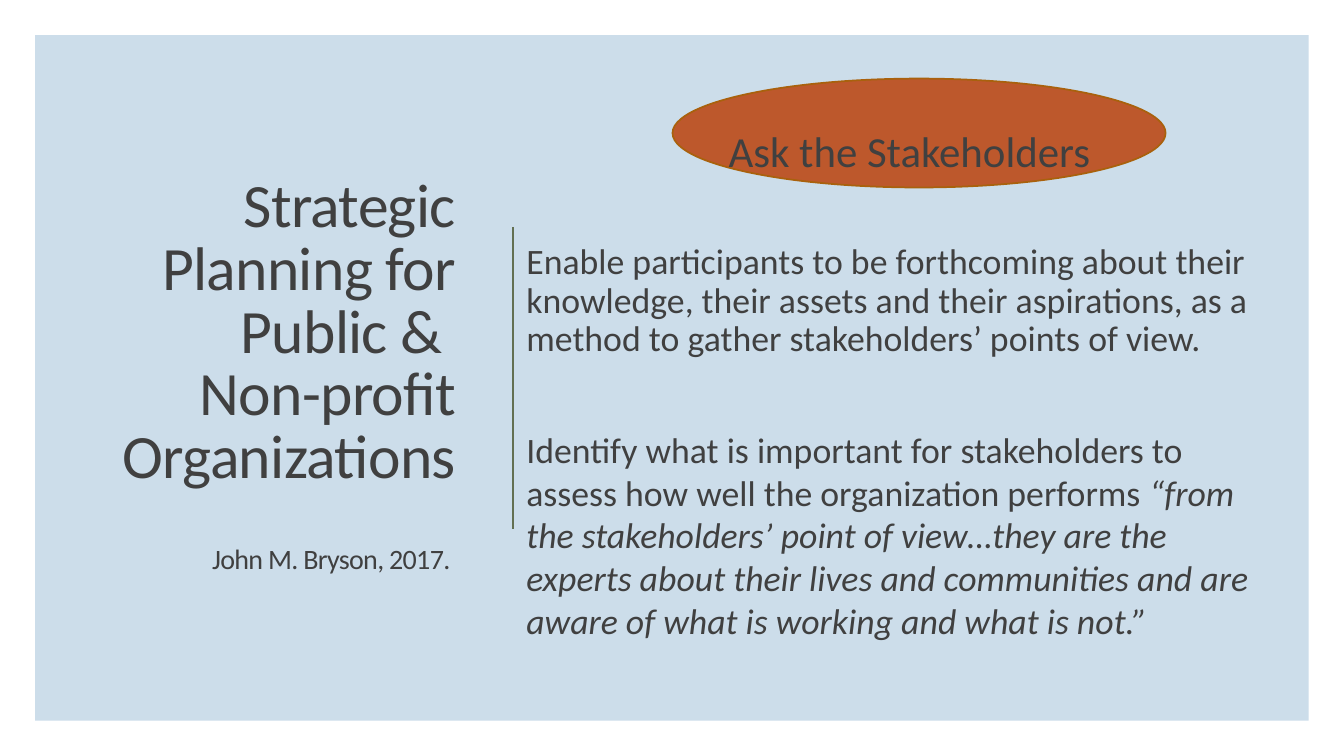
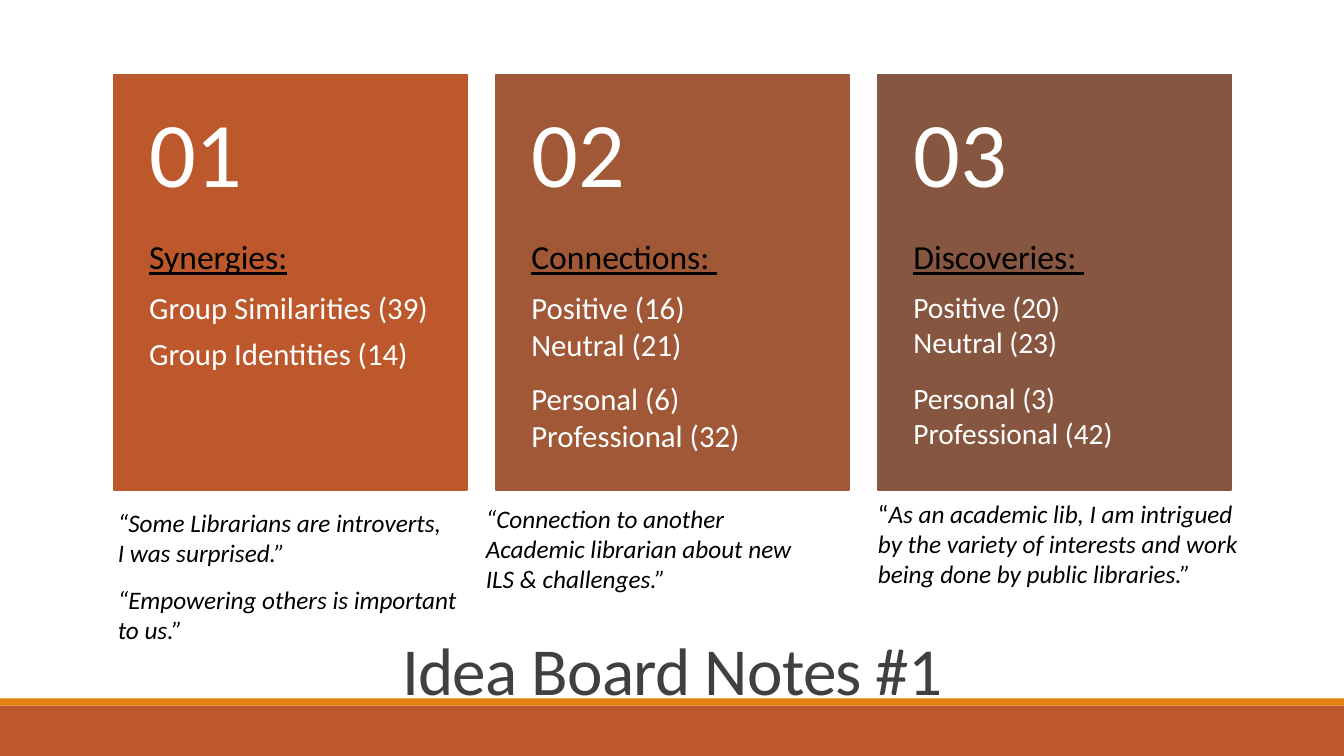
from lxml import etree
from pptx import Presentation
from pptx import util as u
from pptx.dml.color import RGBColor
from pptx.enum import shapes, text
from pptx.oxml.ns import qn

Inches, Pt = u.Inches, u.Pt
FONT = "Calibri"
COLORS = {
    "rust": "BD582C", "sienna": "A05837", "brown": "865640",
    "orange": "E48312", "bronze": "A9610D", "olive": "637052",
    "sky": "CCDDEA", "ink": "404040", "black": "000000", "white": "FFFFFF",
}
TITLE_STYLE = dict(color="ink", ls=0.85, spacing=-0.5)

# Content: a text is a string, or a list of (words, italic) pieces
BOOK = "Strategic\vPlanning for\vPublic & \vNon-profit\vOrganizations"
AUTHOR = "John M. Bryson, 2017. "
HEADING = "Ask the Stakeholders"
ENABLE = ("Enable participants to be forthcoming about their knowledge, their assets "
          "and their aspirations, as a method to gather stakeholders’ points of view.")
IDENTIFY = [
    ("Identify what is important for stakeholders to assess how well the "
     "organization performs ", False),
    ("“from the stakeholders’ point of view…they are the experts about their lives "
     "and communities and are aware of what is working and what is not.”", True),
]
NOTES_TITLE = "Idea Board Notes #1"
# Each card: counts come in groups, parted by group_gap; lines are line_gap apart
CARDS = [
    dict(color="rust", head="Synergies:\t", size=22, line_gap=6, group_gap=0,
         counts=[["Group Similarities (39)", "Group Identities (14)"]]),
    dict(color="sienna", head="Connections: ", size=22, line_gap=0, group_gap=12,
         counts=[["Positive (16)", "Neutral (21)"], ["Personal (6)", "Professional (32)"]]),
    dict(color="brown", head="Discoveries: ", size=21, line_gap=0, group_gap=14.5,
         counts=[["Positive (20)", "Neutral (23)"], ["Personal (3)", "Professional (42)"]]),
]
# Left, top, width, quotes as lists of lines
QUOTES = [
    (1.07, 4.98, 3.65, [["“Some Librarians are introverts,", "I was surprised.”"],
                        ["“Empowering others is important", "to us.”"]]),
    (4.72, 4.94, 3.32, [["“Connection to another", "Academic librarian about new",
                         "ILS & challenges.”"]]),
    (8.61, 4.89, 3.86, [[[("“", False), ("As an academic lib, I am intrigued", True)],
                         "by the variety of interests and work",
                         "being done by public libraries.”"]]),
]


def rgb(name):
    return RGBColor.from_string(COLORS[name])


def add_block(slide, box, fill, line=None, kind=shapes.MSO_SHAPE.RECTANGLE):
    block = slide.shapes.add_shape(kind, *map(Inches, box))
    block.shadow.inherit = False
    block.fill.solid()
    block.fill.fore_color.rgb = rgb(fill)
    if line:
        block.line.color.rgb = rgb(line)
        block.line.width = Pt(1.25)
    else:
        block.line.fill.background()


def para(words, size, color="ink", ls=1.0, before=0, after=0, align="LEFT",
         italic=False, underline=False, spacing=0, tab=None):
    return dict(words=words, size=size, color=color, ls=ls, before=before, after=after,
                align=align, italic=italic, underline=underline, spacing=spacing, tab=tab)


def add_text(slide, box, paras, inset=(0.1, 0.05, 0.1, 0.05), anchor="TOP"):
    frame = slide.shapes.add_textbox(*map(Inches, box)).text_frame
    frame.word_wrap = True
    frame.vertical_anchor = text.MSO_ANCHOR[anchor]
    (frame.margin_left, frame.margin_top,
     frame.margin_right, frame.margin_bottom) = map(Inches, inset)
    for i, item in enumerate(paras):
        p = frame.add_paragraph() if i else frame.paragraphs[0]
        p.alignment = text.PP_ALIGN[item["align"]]
        p.line_spacing = item["ls"]
        p.space_before, p.space_after = Pt(item["before"]), Pt(item["after"])
        font = p.font
        font.name, font.size = FONT, Pt(item["size"])
        font.color.rgb = rgb(item["color"])
        font.italic, font.underline = item["italic"], item["underline"]
        if isinstance(item["words"], str):
            p.text = item["words"]
        else:
            for words, italic in item["words"]:
                run = p.add_run()
                run.text, run.font.italic = words, italic
        if item["spacing"]:
            for run in p.runs:
                run.font._element.set("spc", str(int(item["spacing"] * 100)))
        if item["tab"]:
            stops = etree.Element(qn("a:tabLst"))
            etree.SubElement(stops, qn("a:tab"), pos=str(Inches(item["tab"])), algn="l")
            p._p.pPr.find(qn("a:defRPr")).addprevious(stops)


def add_bands(slide):
    add_block(slide, (0, 7, 13.33, 0.5), "rust")
    add_block(slide, (0, 6.93, 13.33, 0.07), "orange")


def stakeholders_slide(slide):
    add_block(slide, (0.35, 0.35, 12.63, 6.8), "sky")
    add_text(slide, (1.06, 1.71, 3.56, 4.2), [
        para(BOOK, 44, align="RIGHT", **TITLE_STYLE),
        para(AUTHOR, 20, align="RIGHT", before=39.5, **TITLE_STYLE)])

    # Divider
    divider = slide.shapes.add_connector(
        shapes.MSO_CONNECTOR.STRAIGHT, *map(Inches, (5.09, 2.25, 5.09, 5.25)))
    divider.line.color.rgb = rgb("olive")
    divider.line.width = Pt(1.5)
    etree.SubElement(divider._element.spPr, qn("a:effectLst"))

    # Heading and body
    add_block(slide, (6.67, 0.78, 4.89, 1.08), "rust", "bronze", shapes.MSO_SHAPE.OVAL)
    add_text(slide, (6.67, 1.19, 4.7, 0.6), [para(HEADING, 30.6, align="CENTER")])
    add_text(slide, (5.22, 2.42, 7.48, 4), [
        para(ENABLE, 25.5, ls=0.9),
        para(IDENTIFY, 25.5, before=48.5)], inset=(0, 0, 0, 0))


def notes_slide(slide):
    add_bands(slide)
    add_text(slide, (1.17, 6.26, 11, 0.87),
             [para(NOTES_TITLE, 48, align="CENTER", **TITLE_STYLE)], anchor="MIDDLE")

    # Cards
    top, width, number_height, body_height = 0.74, 3.5, 1.65, 2.47
    for i, card in enumerate(CARDS):
        left = 1.13 + i * 3.79
        add_block(slide, (left, top, width, number_height + body_height),
                  card["color"], card["color"])
        add_text(slide, (left, top, width, number_height),
                 [para(f"{i + 1:02}", 66, "white", ls=0.9)],
                 inset=(0.35, 0.18, 0.35, 0.18), anchor="MIDDLE")
        lines = [para(card["head"], 24, "black", ls=0.9, after=8.4,
                      underline=True, tab=1.75)]
        for g, group in enumerate(card["counts"]):
            for n, count in enumerate(group):
                gap = card["group_gap"] if g and not n else 0
                lines.append(para(count, card["size"], "white",
                                  before=gap, after=card["line_gap"]))
        add_text(slide, (left, top + number_height, width, body_height), lines,
                 inset=(0.35, 0, 0.35, 0.36))

    # Quotes
    for left, top, width, quotes in QUOTES:
        lines = [para(line, 18, "black", italic=True, before=12 if q and not n else 0)
                 for q, quote in enumerate(quotes) for n, line in enumerate(quote)]
        add_text(slide, (left, top, width, 0.1 + 0.3 * len(lines)), lines)


def main():
    deck = Presentation()
    deck.slide_width, deck.slide_height = Inches(13.33), Inches(7.5)
    for build in (stakeholders_slide, notes_slide):
        build(deck.slides.add_slide(deck.slide_layouts[6]))
    deck.save("out.pptx")


if __name__ == "__main__":
    main()
